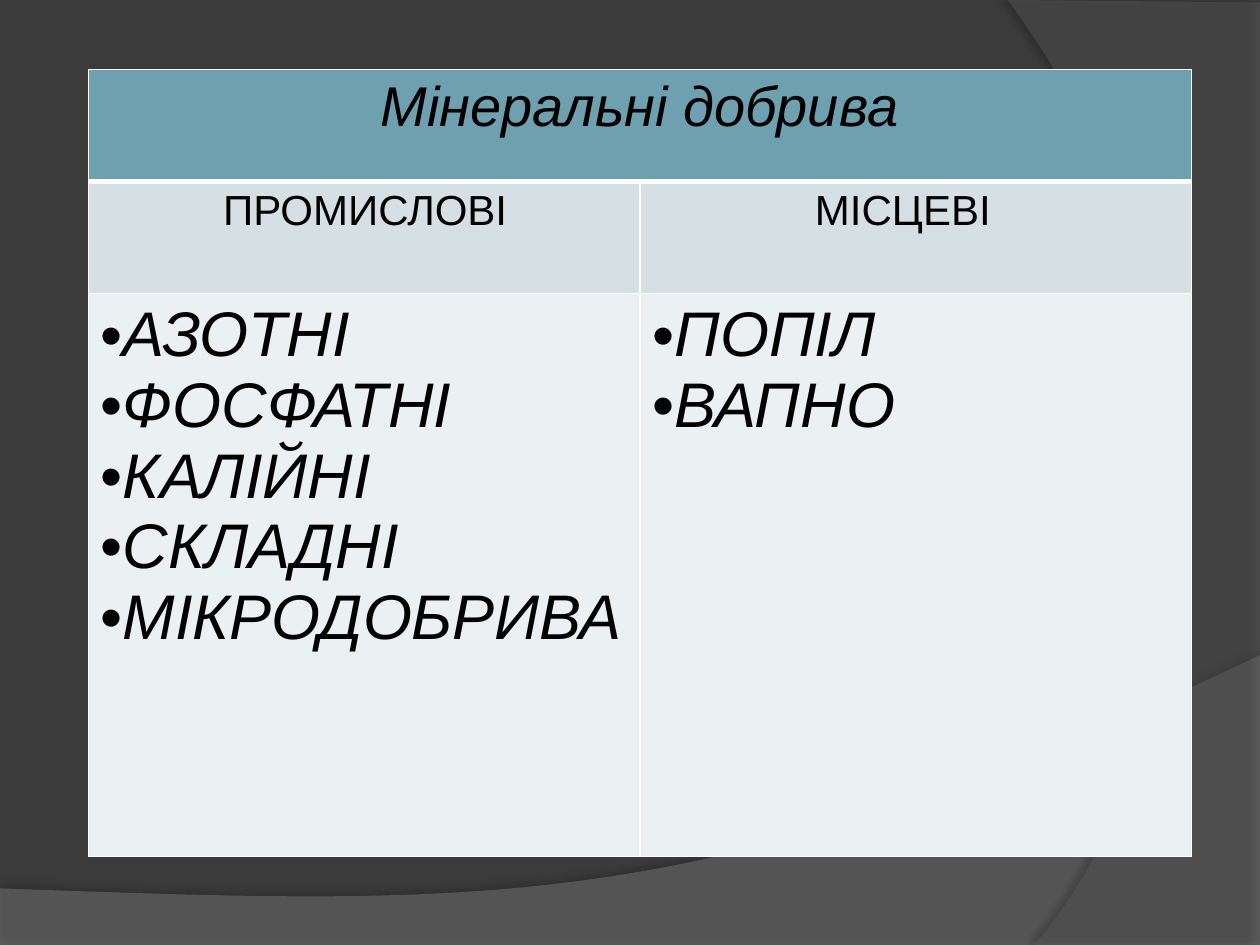
from lxml import etree
from pptx import Presentation
from pptx.dml.color import RGBColor
from pptx.enum import text
from pptx.oxml import ns
from pptx import util as u


def colour(value):
    return RGBColor.from_string(value)


def add_child(parent, tag, **attributes):
    child = etree.SubElement(parent, ns.qn(tag))
    for name, value in attributes.items():
        child.set(name, str(value))
    return child


def add_colour(parent, value, alpha):
    element = add_child(parent, "a:srgbClr", val=value)
    add_child(element, "a:alpha", val=alpha * 1000)


def curve_points(start, first, second, end, steps=40):
    for step in range(1, steps + 1):
        t = step / steps
        weights = ((1 - t) ** 3, 3 * t * (1 - t) ** 2, 3 * t * t * (1 - t), t ** 3)
        yield tuple(
            sum(weight * point[axis] for weight, point in zip(weights, (start, first, second, end)))
            for axis in (0, 1)
        )


def add_backdrop(slide, box, corners, curve, fill, alpha, shadow):
    left, top = box
    points = corners + list(curve_points(corners[-1], *curve))
    points = [(u.Cm(left + x), u.Cm(top + y)) for x, y in points]
    builder = slide.shapes.build_freeform(*points[0], scale=1.0)
    builder.add_line_segments(points[1:], close=True)
    shape = builder.convert_to_shape()
    shape.line.fill.background()
    shape.fill.solid()
    shape.fill.fore_color.rgb = colour(fill)
    properties = shape._element.spPr
    fill_colour = properties.find(ns.qn("a:solidFill"))[0]
    add_child(fill_colour, "a:alpha", val=alpha * 1000)
    opacity, blur, distance, angle = shadow
    effects = add_child(properties, "a:effectLst")
    outer = add_child(
        effects, "a:outerShdw", blurRad=u.Pt(blur), dist=u.Pt(distance),
        dir=angle * 60000, algn="ctr", rotWithShape=0,
    )
    add_colour(outer, "000000", opacity)


def style_cell(cell, fill, top_width, bottom_width):
    properties = cell._tc.get_or_add_tcPr()
    for side, width in (("L", 1), ("R", 1), ("T", top_width), ("B", bottom_width)):
        line = add_child(properties, "a:ln" + side, w=u.Pt(width))
        add_colour(add_child(line, "a:solidFill"), "FFFFFF", 100)
    cell.fill.solid()
    cell.fill.fore_color.rgb = colour(fill)


def write_cell(cell, lines, size, italic, bullet=False, centred=False):
    frame = cell.text_frame
    for index, line in enumerate(lines):
        paragraph = frame.paragraphs[0] if index == 0 else frame.add_paragraph()
        paragraph.alignment = text.PP_ALIGN.CENTER if centred else text.PP_ALIGN.LEFT
        if bullet:
            properties = paragraph._p.get_or_add_pPr()
            add_child(properties, "a:buFont", typeface="Arial")
            add_child(properties, "a:buChar", char="•")
        run = paragraph.add_run()
        run.text = line
        run.font.name = "Arial"
        run.font.size = u.Pt(size)
        run.font.italic = italic
        run.font.bold = False
        run.font.color.rgb = colour("000000")


def add_fertiliser_table(slide, box):
    left, top, width, height = box
    header_height = 2.26
    heights = (header_height, header_height, height - 2 * header_height)
    fills = ("6EA0B0", "D5DFE4", "EBF0F2")
    border_widths = ((1, 3), (3, 1), (1, 1))
    columns = (
        ("ПРОМИСЛОВІ", 2.72, ("АЗОТНІ", "ФОСФАТНІ", "КАЛІЙНІ", "СКЛАДНІ", "МІКРОДОБРИВА")),
        ("МІСЦЕВІ", 3.53, ("ПОПІЛ", "ВАПНО")),
    )
    table = slide.shapes.add_table(3, 2, *map(u.Cm, box)).table
    for column in table.columns:
        column.width = u.Cm(width / 2)
    for index, row in enumerate(table.rows):
        row.height = u.Cm(heights[index])
        for cell in row.cells:
            style_cell(cell, fills[index], *border_widths[index])
    table.cell(0, 0).merge(table.cell(0, 1))
    write_cell(table.cell(0, 0), ["Мінеральні добрива"], 32, True, centred=True)
    for index, (heading, indent, items) in enumerate(columns):
        heading_cell = table.cell(1, index)
        heading_cell.margin_left = u.Cm(indent)
        write_cell(heading_cell, [heading], 24, False)
        write_cell(table.cell(2, index), items, 36, True, bullet=True)


def main():
    presentation = Presentation()
    presentation.slide_width = u.Cm(25.4)
    presentation.slide_height = u.Cm(19.05)
    slide = presentation.slides.add_slide(presentation.slide_layouts[6])
    slide.background.fill.solid()
    slide.background.fill.fore_color.rgb = colour("3B3B3B")
    add_backdrop(
        slide, (0, 13.21),
        [(0, 4.7), (0, 5.84), (25.4, 5.84), (25.4, 0)],
        [(14.2, 5.31), (9.93, 5.05), (0, 4.7)],
        "7F7F7F", 45, (35, 4, 3.5, 270),
    )
    add_backdrop(
        slide, (20.32, 0),
        [(5.08, 0.05), (5.08, 19.05), (0.53, 19.05)],
        [(3.43, 15.72), (5.54, 7.62), (0, 0)],
        "5E5E5E", 40, (45, 4, 4, 180),
    )
    add_fertiliser_table(slide, (1.78, 1.4, 22.24, 15.87))
    presentation.save("out.pptx")


if __name__ == "__main__":
    main()
